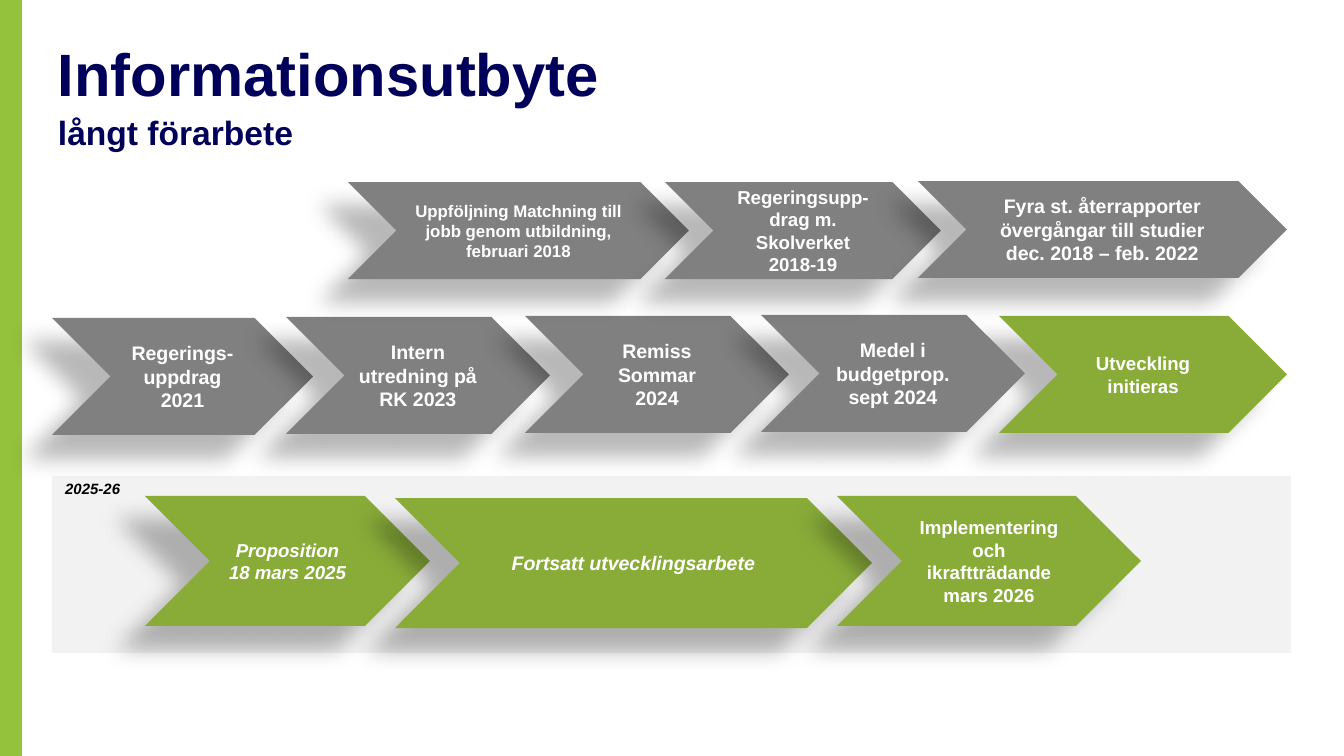
from pptx import Presentation
from pptx.dml.color import RGBColor
from pptx.enum.shapes import MSO_SHAPE
from pptx.enum.text import MSO_ANCHOR, MSO_AUTO_SIZE, PP_ALIGN
from pptx.oxml import parse_xml
from pptx.oxml.ns import nsdecls
from pptx.util import Pt

RECT, CHEVRON = MSO_SHAPE.RECTANGLE, MSO_SHAPE.CHEVRON
TOP, MIDDLE = MSO_ANCHOR.TOP, MSO_ANCHOR.MIDDLE
LEFT, CENTER = PP_ALIGN.LEFT, PP_ALIGN.CENTER
NO_FIT = MSO_AUTO_SIZE.NONE
EMU_PER_PX = 914400 / 134.4

GREY, GREEN, LIME = "808080", "89AC39", "95C23D"
NAVY, WHITE, BLACK, PANEL = "00005A", "FFFFFF", "000000", "F2F2F2"

TITLE = [("Informationsutbyte", 32), ("långt förarbete", 18)]
PERIOD = "2025-26"
ROWS = [
    (130, [
        (145, 496, 285, GREEN, 10, True, ["Proposition", "18 mars 2025"]),
        (395, 498, 477, GREEN, 10.5, True, ["Fortsatt utvecklingsarbete"]),
        (837, 496, 304, GREEN, 10, False,
         ["Implementering och ikraftträdande", "mars 2026"]),
    ]),
    (117, [
        (52, 318, 261, GREY, 10.5, False, ["Regerings-uppdrag 2021"]),
        (286, 317, 264, GREY, 10.5, False, ["Intern utredning på RK 2023"]),
        (525, 316, 264, GREY, 10.5, False, ["Remiss", "Sommar 2024"]),
        (999, 316, 288, GREEN, 10, False, ["Utveckling initieras"]),
        (761, 315, 264, GREY, 10.5, False,
         ["Medel i budgetprop.", "sept 2024"]),
    ]),
    (97, [
        (348, 182, 341, GREY, 9, False,
         ["Uppföljning Matchning till jobb genom utbildning, februari 2018"]),
        (665, 182, 276, GREY, 10, False,
         ["Regeringsupp-drag m. Skolverket\v2018-19"]),
        (918, 181, 369, GREY, 10.5, False,
         ["Fyra st. återrapporter övergångar till studier "
          "dec. 2018 – feb. 2022"]),
    ]),
]


def px(*values):
    return [round(v * EMU_PER_PX) for v in values]


def rgb(value):
    return RGBColor.from_string(value)


def style_run(r, color, **font):
    for name, value in {"name": "Arial", "bold": True, **font}.items():
        setattr(r.font, name, value)
    r.font.color.rgb = rgb(color)


def write(tf, lines, align, color, **font):
    tf.word_wrap = True
    for i, line in enumerate(lines):
        p = tf.add_paragraph() if i else tf.paragraphs[0]
        p.text = line
        p.alignment = align
        for r in p.runs:
            style_run(r, color, **font)


def add_block(shapes, kind, box, fill):
    sp = shapes.add_shape(kind, *px(*box))
    sp.shadow.inherit = False
    sp.fill.solid()
    sp.fill.fore_color.rgb = rgb(fill)
    sp.line.fill.background()
    return sp


def add_chevron(shapes, box, fill, size, italic, lines):
    sp = add_block(shapes, CHEVRON, box, fill)
    effects = sp.element.spPr.find(
        "{http://schemas.openxmlformats.org/drawingml/2006/main}effectLst")
    effects.append(parse_xml(
        f'<a:outerShdw {nsdecls("a")} blurRad="150000" dist="250000" '
        'dir="8460000" algn="ctr" rotWithShape="0"><a:srgbClr val="000000">'
        '<a:alpha val="28000"/></a:srgbClr></a:outerShdw>'))
    sp.text_frame.vertical_anchor = MIDDLE
    write(sp.text_frame, lines, CENTER, WHITE, size=Pt(size), italic=italic)


def add_title(sp):
    sp.left, sp.top, sp.width, sp.height = px(58, 31, 1227, 99)
    tf = sp.text_frame
    frame = {"margin_left": 0, "margin_top": 0, "margin_right": 0,
             "margin_bottom": 0, "vertical_anchor": TOP,
             "auto_size": NO_FIT, "word_wrap": True}
    for name, value in frame.items():
        setattr(tf, name, value)
    p = tf.paragraphs[0]
    p.alignment, p.line_spacing = LEFT, 1.08
    for i, (text, size) in enumerate(TITLE):
        if i:
            p.add_line_break()
        r = p.add_run()
        r.text = text
        style_run(r, NAVY, size=Pt(size))


def main():
    """Build the slide with three rows of process chevrons."""
    prs = Presentation()
    prs.slide_width, prs.slide_height = px(1344, 756)
    s = prs.slides.add_slide(prs.slide_layouts[5])
    add_title(s.shapes.title)

    bar = add_block(s.shapes, RECT, (0, 0, 21, 756), LIME)
    bar.line.color.rgb = rgb(LIME)
    bar.line.width = Pt(1)
    add_block(s.shapes, RECT, (52, 476, 1239, 177), PANEL)

    for height, steps in ROWS:
        group = s.shapes.add_group_shape()
        for left, top, width, *look in steps:
            add_chevron(group.shapes, (left, top, width, height), *look)

    label = s.shapes.add_textbox(*px(52, 473, 93, 32))
    write(label.text_frame, [PERIOD], LEFT, BLACK, size=Pt(8), italic=True)
    prs.save("out.pptx")


if __name__ == "__main__":
    main()
